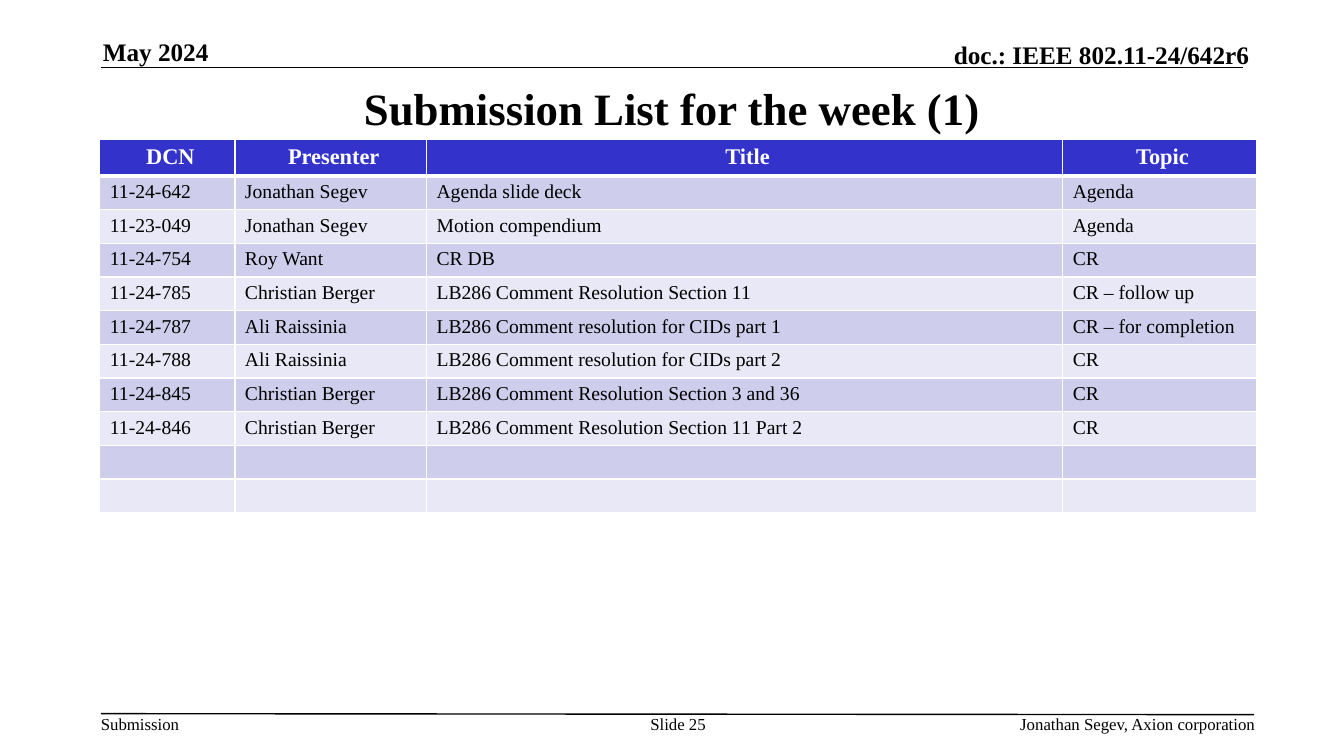
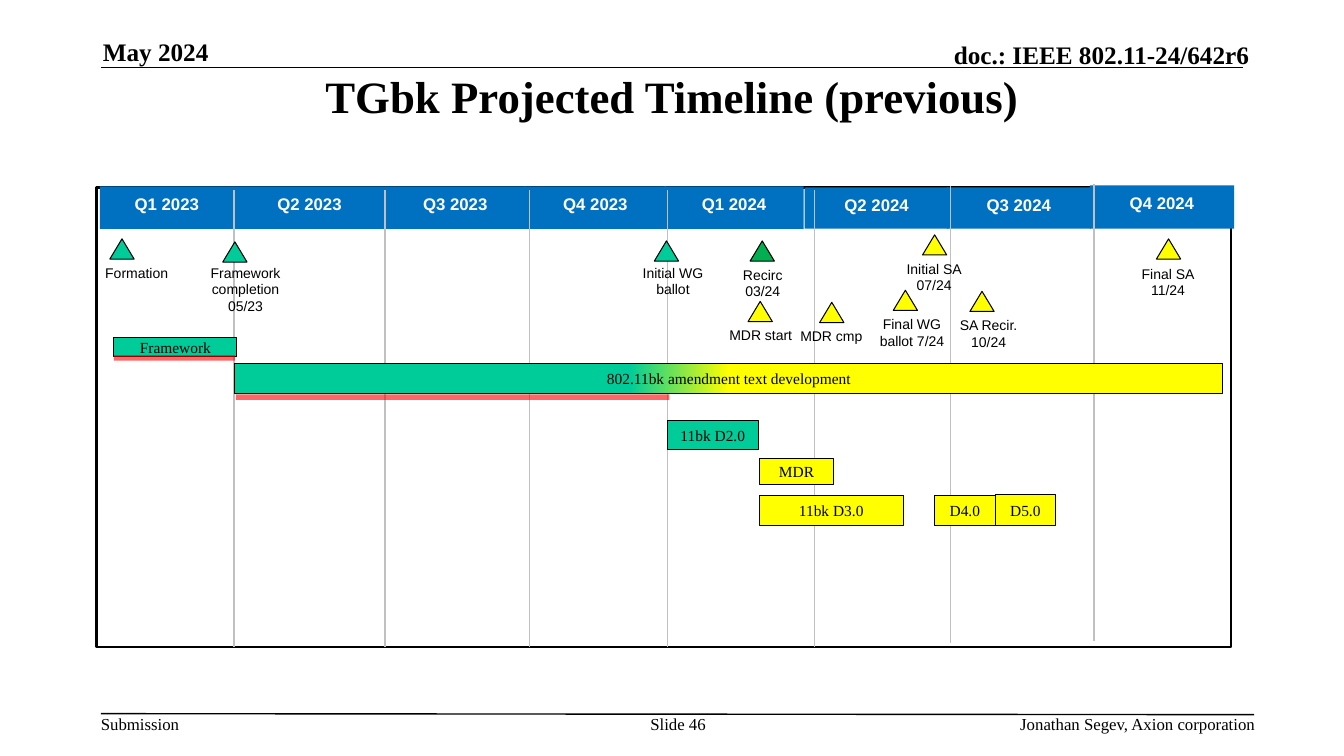
"""Builds two meeting slides: a submission list and a projected timeline."""
from lxml.etree import SubElement
from pptx import Presentation
from pptx.dml.color import RGBColor
from pptx.enum.shapes import MSO_CONNECTOR, MSO_SHAPE
from pptx.enum.text import MSO_ANCHOR, PP_ALIGN
from pptx.oxml.ns import qn
from pptx.util import Pt

PX = 9144
SERIF, SANS = "Times New Roman", "Arial"
LEFT, CENTER, RIGHT = PP_ALIGN.LEFT, PP_ALIGN.CENTER, PP_ALIGN.RIGHT
TOP, MIDDLE, BOTTOM = MSO_ANCHOR.TOP, MSO_ANCHOR.MIDDLE, MSO_ANCHOR.BOTTOM
COLORS = {
    "black": "000000", "white": "FFFFFF", "header": "3333CC",
    "odd": "CECEEC", "even": "E8E8F6", "quarter": "0070C0",
    "divider": "C0C0C0", "teal": "00CC99", "green": "00B050",
    "yellow": "FFFF00", "red": "FF0000",
}

RULES = [((100, 67), (1233, 67)), ((100, 708), (1244, 709))]
RUNNING_TEXTS = [
    ("May 2024", (102, 36, 273, 30), 18, True, LEFT, BOTTOM),
    ("doc.: IEEE 802.11-24/642r6", (729, 39, 510, 30), 18, True, RIGHT, BOTTOM),
    ("Submission", (100, 708, 79, 20), 12, False, LEFT, TOP),
    ("Jonathan Segev, Axion corporation", (781, 708, 464, 20), 12, False, RIGHT, TOP),
]

TABLE_LEFT, TABLE_TOP = 99, 138
COLUMN_WIDTHS = [134, 190, 631, 192]
HEADER_HEIGHT, ROW_HEIGHT = 34, 31
SUBMISSIONS = [
    ("DCN", "Presenter", "Title", "Topic"),
    ("11-24-642", "Jonathan Segev", "Agenda slide deck", "Agenda"),
    ("11-23-049", "Jonathan Segev", "Motion compendium", "Agenda"),
    ("11-24-754", "Roy Want", "CR DB", "CR"),
    ("11-24-785", "Christian Berger", "LB286 Comment Resolution Section 11", "CR – follow up"),
    ("11-24-787", "Ali Raissinia", "LB286 Comment resolution for CIDs part 1", "CR – for completion"),
    ("11-24-788", "Ali Raissinia", "LB286 Comment resolution for CIDs part 2", "CR"),
    ("11-24-845", "Christian Berger", "LB286 Comment Resolution Section 3 and 36", "CR"),
    ("11-24-846", "Christian Berger", "LB286 Comment Resolution Section 11 Part 2", "CR"),
    ("", "", "", ""),
    ("", "", "", ""),
]

TIMELINE_FRAME = (96, 186, 1125, 456)
QUARTER_BOTTOM = 227
QUARTERS = [
    ("Q1 2023", 99, 185, 133), ("Q2 2023", 232, 185, 150),
    ("Q3 2023", 382, 185, 139), ("Q4 2023", 520, 185, 141),
    ("Q1 2024", 659, 185, 138), ("Q2 2024", 798, 186, 143),
    ("Q3 2024", 939, 186, 143), ("Q4 2024", 1081, 184, 143),
]
DIVIDER_LENGTH = 453
DIVIDERS = [(232, 189), (382, 189), (525, 189), (662, 189), (808, 189), (943, 185), (1085, 183)]
MARKER_WIDTH, MARKER_HEIGHT = 24, 20
MILESTONES = [
    ((109, 237), "teal", ["Formation"], (88, 258, 95, 26)),
    ((221, 240), "teal", ["Framework completion", "05/23"], (175, 258, 137, 60)),
    ((649, 239), "teal", ["Initial WG ballot"], (621, 258, 93, 43)),
    ((744, 239), "green", ["Recirc 03/24"], (710, 260, 93, 43)),
    ((915, 233), "yellow", ["Initial SA", "07/24"], (880, 254, 93, 43)),
    ((886, 288), "yellow", ["Final WG ballot 7/24"], (858, 309, 93, 43)),
    ((742, 299), "yellow", ["MDR start"], (708, 320, 93, 26)),
    ((813, 300), "yellow", ["MDR cmp"], (778, 321, 93, 26)),
    ((1147, 237), "yellow", ["Final SA", "11/24"], (1112, 259, 93, 43)),
    ((962, 289), "yellow", ["SA Recir.", "10/24"], (934, 310, 93, 43)),
]
AMENDMENT_STOPS = [(0, "teal"), (40, "teal"), (50, "yellow"), (100, "yellow")]
BARS = [
    ("Framework", (113, 335, 122, 19), "teal"),
    ("802.11bk amendment text development", (233, 361, 980, 29), AMENDMENT_STOPS),
    ("11bk D2.0", (662, 417, 90, 29), "teal"),
    ("11bk D3.0", (753, 492, 143, 29), "yellow"),
    ("MDR", (753, 455, 74, 26), "yellow"),
    ("D4.0", (927, 492, 60, 29), "yellow"),
    ("D5.0", (987, 491, 60, 30), "yellow"),
]
PROGRESS_LINES = [((113, 355), (233, 355)), ((234, 394), (664, 394))]


def emu(values):
    return [value * PX for value in values]


def rgb(name):
    return RGBColor.from_string(COLORS[name])


def write_text(frame, lines, size, font=SERIF, color="black", bold=False,
               align=CENTER, anchor=TOP, insets=(0, 0, 0, 0)):
    frame.word_wrap = True
    frame.vertical_anchor = anchor
    (frame.margin_left, frame.margin_top,
     frame.margin_right, frame.margin_bottom) = emu(insets)
    for index, line in enumerate(lines):
        paragraph = frame.add_paragraph() if index else frame.paragraphs[0]
        paragraph.alignment = align
        run = paragraph.add_run()
        run.text = line
        run.font.size = Pt(size)
        run.font.name = font
        run.font.bold = bold
        run.font.color.rgb = rgb(color)


def add_label(slide, box, lines, size, **style):
    write_text(slide.shapes.add_textbox(*emu(box)).text_frame, lines, size, **style)


def add_line(slide, start, end, color="black", width=1, opacity=None):
    line = slide.shapes.add_connector(MSO_CONNECTOR.STRAIGHT, *emu(start + end))
    line.line.color.rgb = rgb(color)
    line.line.width = Pt(width)
    properties = line._element.spPr
    if opacity:
        SubElement(properties.find(".//" + qn("a:srgbClr")), qn("a:alpha"), val=str(opacity * 1000))
    SubElement(properties, qn("a:effectLst"))


def fill_gradient(shape, stops):
    shape.fill.gradient()
    shape.fill.gradient_angle = 0
    stop_list = shape._element.spPr.find(".//" + qn("a:gsLst"))
    stop_list.clear()
    for position, color in stops:
        stop = SubElement(stop_list, qn("a:gs"), pos=str(position * 1000))
        SubElement(stop, qn("a:srgbClr"), val=COLORS[color])


def add_box(slide, box, fill=None, outline="black", width=0.75, kind=MSO_SHAPE.RECTANGLE):
    shape = slide.shapes.add_shape(kind, *emu(box))
    shape.shadow.inherit = False
    if fill is None:
        shape.fill.background()
    elif isinstance(fill, list):
        fill_gradient(shape, fill)
    else:
        shape.fill.solid()
        shape.fill.fore_color.rgb = rgb(fill)
    if outline:
        shape.line.color.rgb = rgb(outline)
        shape.line.width = Pt(width)
    else:
        shape.line.fill.background()
    return shape


def add_page(presentation, title, title_height, number):
    slide = presentation.slides.add_slide(presentation.slide_layouts[6])
    for start, end in RULES:
        add_line(slide, start, end)
    for text, box, size, bold, align, anchor in RUNNING_TEXTS:
        add_label(slide, box, [text], size, bold=bold, align=align, anchor=anchor)
    add_label(slide, (634, 708, 77, 40), [f"Slide {number}"], 12)
    add_label(slide, (100, 75, 1133, title_height), [title], 32, bold=True,
              anchor=MIDDLE, insets=(10, 5, 10, 5))
    return slide


def style_cell(cell, text, row):
    header = row == 0
    properties = cell._tc.get_or_add_tcPr()
    for side in ("L", "R", "T", "B"):
        heavy = (header and side == "B") or (row == 1 and side == "T")
        border = SubElement(properties, qn(f"a:ln{side}"), w=str(Pt(3 if heavy else 1)))
        SubElement(SubElement(border, qn("a:solidFill")), qn("a:srgbClr"), val=COLORS["white"])
    cell.fill.solid()
    cell.fill.fore_color.rgb = rgb("header" if header else "odd" if row % 2 else "even")
    cell.margin_left, cell.margin_top, cell.margin_right, cell.margin_bottom = emu(
        (10, 5, 4 if header else 10, 5))
    if text:
        write_text(cell.text_frame, [text], 16 if header else 14, bold=header,
                   color="white" if header else "black", align=CENTER if header else LEFT,
                   insets=(10, 5, 4 if header else 10, 5))
    else:
        SubElement(cell.text_frame.paragraphs[0]._p, qn("a:endParaRPr"), sz="1400")


def build_submissions(presentation):
    slide = add_page(presentation, "Submission List for the week (1)", 64, 25)
    heights = [HEADER_HEIGHT] + [ROW_HEIGHT] * (len(SUBMISSIONS) - 1)
    box = (TABLE_LEFT, TABLE_TOP, sum(COLUMN_WIDTHS), sum(heights))
    table = slide.shapes.add_table(len(heights), len(COLUMN_WIDTHS), *emu(box)).table
    for column, width in zip(table.columns, COLUMN_WIDTHS):
        column.width = width * PX
    for row, (height, texts) in enumerate(zip(heights, SUBMISSIONS)):
        table.rows[row].height = height * PX
        for column, text in enumerate(texts):
            style_cell(table.cell(row, column), text, row)


def build_timeline(presentation):
    slide = add_page(presentation, "TGbk Projected Timeline (previous)", 40, 46)
    add_box(slide, TIMELINE_FRAME, width=2)
    for text, left, top, width in QUARTERS:
        quarter = add_box(slide, (left, top, width, QUARTER_BOTTOM - top), "quarter", None)
        write_text(quarter.text_frame, [text], 12, SANS, "white", True, insets=(10, 7, 10, 5))
    for left, top in DIVIDERS:
        add_line(slide, (left, top), (left, top + DIVIDER_LENGTH), "divider")
    for text, box, fill in BARS:
        bar = add_box(slide, box, fill)
        write_text(bar.text_frame, [text], 11, anchor=MIDDLE, insets=(0, 5, 0, 5))
    for start, end in PROGRESS_LINES:
        add_line(slide, start, end, "red", 4, opacity=60)
    for position, color, lines, label_box in MILESTONES:
        add_box(slide, position + (MARKER_WIDTH, MARKER_HEIGHT), color,
                kind=MSO_SHAPE.ISOSCELES_TRIANGLE)
        add_label(slide, label_box, lines, 10, font=SANS, insets=(9, 4, 9, 4))


def main():
    presentation = Presentation()
    presentation.slide_width, presentation.slide_height = emu((1333, 750))
    build_submissions(presentation)
    build_timeline(presentation)
    presentation.save("out.pptx")


if __name__ == "__main__":
    main()
